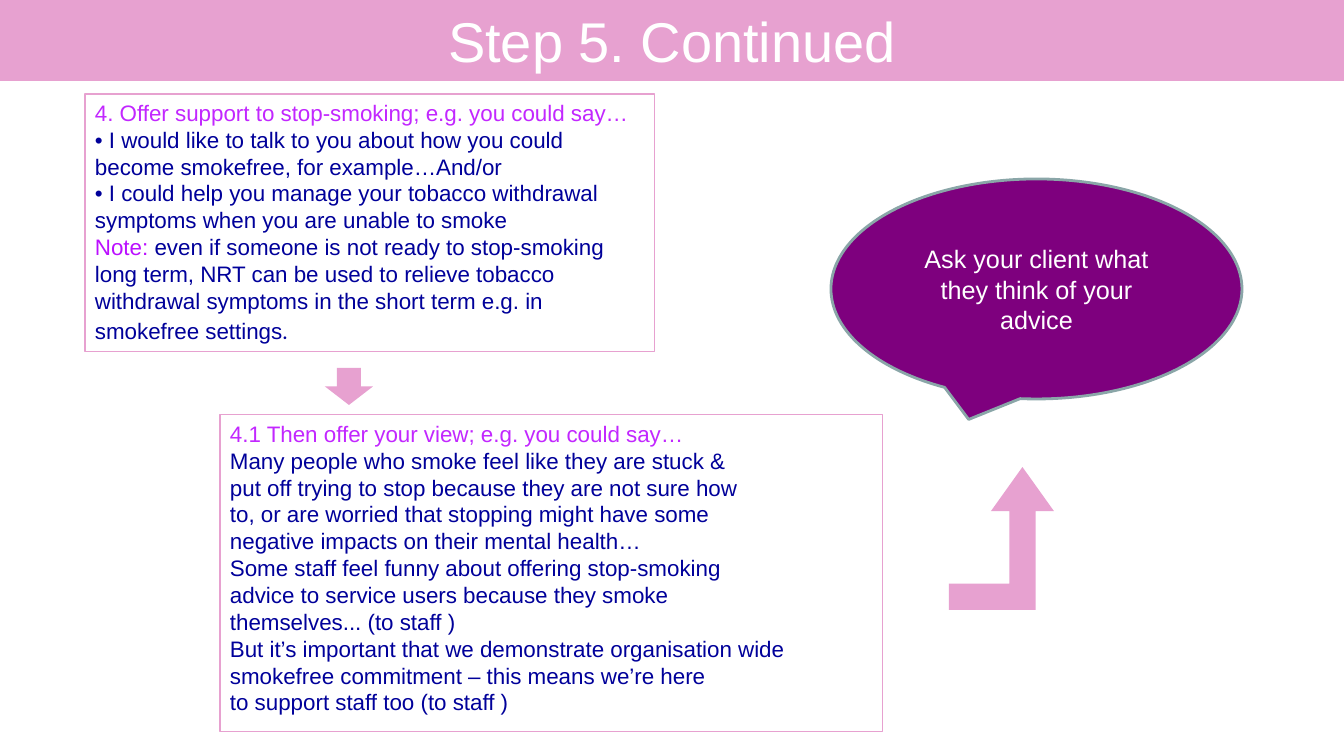
from pptx import Presentation
from pptx.dml.color import RGBColor
from pptx.enum.shapes import MSO_SHAPE
from pptx.enum.text import MSO_ANCHOR, MSO_AUTO_SIZE, PP_ALIGN
from pptx.util import Pt

RECT = MSO_SHAPE.RECTANGLE
DOWN = MSO_SHAPE.DOWN_ARROW
BENT = MSO_SHAPE.BENT_UP_ARROW
BUBBLE = MSO_SHAPE.OVAL_CALLOUT
CENTER = PP_ALIGN.CENTER
MIDDLE = MSO_ANCHOR.MIDDLE
GROW = MSO_AUTO_SIZE.SHAPE_TO_FIT_TEXT

PINK, PURPLE, SLATE = "E7A1D0", "7E007E", "8AA6A8"
HEAD, NOTE, NAVY, WHITE = "C227FF", "BB0FFF", "00009A", "FFFFFF"


def px(n):
    return round(n * 914400 / 100.8)


def rgb(code):
    return RGBColor.from_string(code)


class Deck:
    face = "Arial"

    def __init__(self):
        self.prs = Presentation()
        self.prs.slide_width, self.prs.slide_height = px(1344), px(756)
        self.slide = self.prs.slides.add_slide(self.prs.slide_layouts[6])

    def style(self, font, size, color, face=face):
        font.name, font.size = face, Pt(size)
        font.color.rgb = rgb(color)

    def shape(self, kind, box, fill, adjust=(), line=None):
        item = self.slide.shapes.add_shape(kind, *map(px, box))
        item.shadow.inherit = False
        item.fill.solid()
        item.fill.fore_color.rgb = rgb(fill)
        if line:
            item.line.color.rgb = rgb(line)
            item.line.width = Pt(2)
        else:
            item.line.fill.background()
        for i, value in enumerate(adjust):
            item.adjustments[i] = value
        return item

    def label(self, item, text, size):
        frame = item.text_frame
        frame.word_wrap = True
        frame.vertical_anchor = MIDDLE
        para = frame.paragraphs[0]
        para.text, para.alignment = text, CENTER
        self.style(para.font, size, WHITE)

    def panel(self, box, head, lines):
        """Outlined box; a line is text or a list of (text, style) runs."""
        item = self.slide.shapes.add_textbox(*map(px, box))
        item.line.color.rgb = rgb(PINK)
        item.line.width = Pt(0.75)
        frame = item.text_frame
        frame.word_wrap = True
        frame.auto_size = GROW
        para = frame.paragraphs[0]
        para.text = head
        self.style(para.font, 16, HEAD)
        for line in lines:
            para = frame.add_paragraph()
            self.style(para.font, 16, NAVY)
            if isinstance(line, str):
                para.text = line
                continue
            for text, look in line:
                run = para.add_run()
                run.text = text
                self.style(run.font, *look)


def main():
    deck = Deck()

    # Title bar
    bar = deck.shape(RECT, (0, 0, 1344, 81), PINK)
    deck.label(bar, "Step 5. Continued", 40)

    # Advice panels
    body = (16, NAVY)
    deck.panel((85, 94, 570, 258), "4. Offer support to stop-smoking; e.g. you could say…", [
        "• I would like to talk to you about how you could",
        "become smokefree, for example…And/or",
        "• I could help you manage your tobacco withdrawal",
        "symptoms when you are unable to smoke",
        [("Note: ", (16, NOTE)), ("even if someone is not ready to stop-smoking", body)],
        "long term, NRT can be used to relieve tobacco",
        "withdrawal symptoms in the short term e.g. in",
        [("smokefree settings", body), (".", (18, NAVY, "Montserrat"))],
    ])
    deck.panel((220, 415, 663, 317), "4.1 Then offer your view; e.g. you could say…", [
        "Many people who smoke feel like they are stuck &",
        "put off trying to stop because they are not sure how",
        "to, or are worried that stopping might have some",
        "negative impacts on their mental health…",
        "Some staff feel funny about offering stop-smoking",
        "advice to service users because they smoke",
        "themselves... (to staff )",
        "But it’s important that we demonstrate organisation wide",
        "smokefree commitment – this means we’re here",
        "to support staff too (to staff )",
    ])

    # Speech bubble
    bubble = deck.shape(BUBBLE, (831, 179, 411, 220), PURPLE, (-0.165, 0.593), SLATE)
    deck.label(bubble, "Ask your client what they think of your advice", 18)

    # Flow arrows
    deck.shape(DOWN, (325, 368, 48, 37), PINK)
    deck.shape(BENT, (949, 467, 105, 143), PINK, (0.25, 0.3, 0.42))

    deck.prs.save("out.pptx")


if __name__ == "__main__":
    main()
